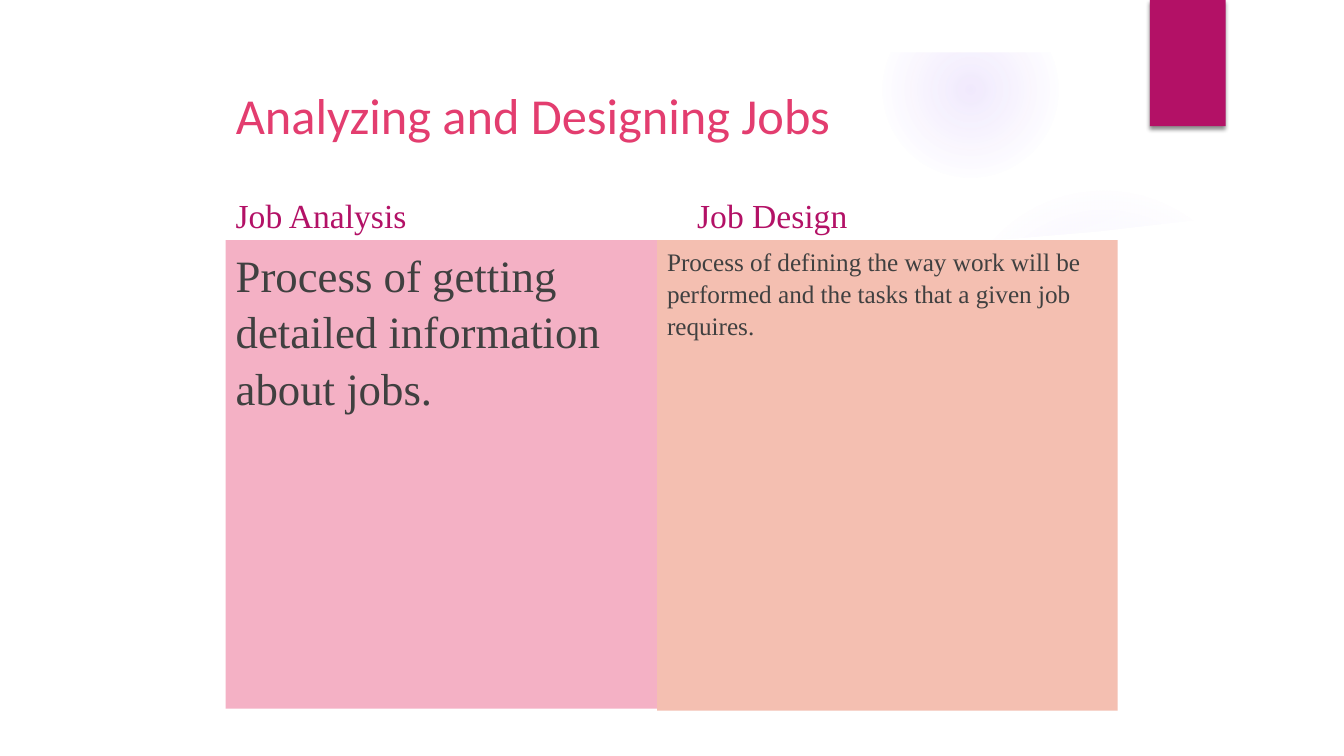
from pptx import Presentation, util as u
from pptx.dml.color import RGBColor
from pptx.enum import shapes, text
from pptx.oxml import parse_xml
from pptx.oxml.ns import nsdecls, qn

PINK = RGBColor(0xE3, 0x3D, 0x6F)
PLUM = RGBColor(0xB3, 0x11, 0x66)
ROSE = RGBColor(0xF4, 0xB1, 0xC5)
PEACH = RGBColor(0xF4, 0xBF, 0xB1)
GREY = RGBColor(0x40, 0x40, 0x40)
WHITE = RGBColor(0xFF, 0xFF, 0xFF)
LILAC = RGBColor(0x9B, 0x6B, 0xF2)

HEAD = {"size": u.Pt(24), "name": "Times New Roman"}
GLOWS = [
    ((23.9, 4.65, 7.82, 7.82), [(0, 7), (36, 6), (69, 0)]),
    ((22.23, 0.03, 4.45, 4.45), [(0, 14), (36, 7), (73, 0)]),
]
BAND = [(23.72, 6.35), (27, 6.2), (32.74, 5.44), (32.59, 4.22),
        (30.25, 4.9), (27.89, 5.49), (25.37, 5.94), (23.62, 6.17)]
PANEL = [(1.27, 5.18), (1.27, 17.78), (32.61, 17.78), (32.61, 5.18),
         (30.48, 5.51), (27.64, 5.84), (25.5, 6.02), (22.71, 6.2),
         (18.64, 6.3), (14.2, 6.25), (9.14, 5.99), (4.04, 5.54)]
COLUMNS = [
    ("Job Analysis", 5.69, (5.69, 6.05, 10.92, 11.81), ROSE, 32,
     "Process of getting detailed information about jobs."),
    ("Job Design", 17.32, (16.56, 6.05, 11.61, 11.86), PEACH, 18,
     "Process of defining the way work will be performed "
     "and the tasks that a given job requires."),
]


def cms(vals):
    return [u.Cm(v) for v in vals]


def paint(shape, fill):
    shape.shadow.inherit = False
    shape.line.fill.background()
    shape.fill.solid()
    shape.fill.fore_color.rgb = fill
    return shape


def block(slide, box, fill, kind=shapes.MSO_SHAPE.RECTANGLE):
    return paint(slide.shapes.add_shape(kind, *cms(box)), fill)


def glow(slide, box, stops):
    shape = block(slide, box, LILAC, shapes.MSO_SHAPE.OVAL)
    marks = "".join(
        f'<a:gs pos="{pos * 1000}"><a:srgbClr val="{LILAC}">'
        f'<a:alpha val="{alpha * 1000}"/></a:srgbClr></a:gs>'
        for pos, alpha in stops)
    grad = parse_xml(
        f'<a:gradFill {nsdecls("a")}><a:gsLst>{marks}</a:gsLst>'
        '<a:path path="circle"><a:fillToRect l="50000" t="50000" '
        'r="50000" b="50000"/></a:path></a:gradFill>')
    props = shape.element.spPr
    props.replace(props.find(qn("a:solidFill")), grad)


def outline(slide, points):
    first, *rest = [cms(p) for p in points]
    form = slide.shapes.build_freeform(*first)
    form.add_line_segments(rest, close=True)
    return paint(form.convert_to_shape(), WHITE)


def band(slide):
    shape = outline(slide, BAND)
    shape.rotation = 350.2
    tint = shape.element.spPr.find(qn("a:solidFill"))[0]
    tint.append(parse_xml(f'<a:alpha {nsdecls("a")} val="20000"/>'))


def ribbon(slide):
    shape = block(slide, (28.98, 0, 1.91, 3.18), PLUM)
    shape.element.spPr.find(qn("a:effectLst")).append(parse_xml(
        f'<a:outerShdw {nsdecls("a")} blurRad="38100" dist="25400" '
        'dir="5400000" rotWithShape="0"><a:srgbClr val="000000">'
        '<a:alpha val="45000"/></a:srgbClr></a:outerShdw>'))


def write(shape, words, color, form, anchor=text.MSO_ANCHOR.TOP, gap=1.0):
    frame = shape.text_frame
    frame.text = words
    frame.word_wrap = True
    frame.auto_size = text.MSO_AUTO_SIZE.NONE
    frame.vertical_anchor = anchor
    para = frame.paragraphs[0]
    para.alignment = text.PP_ALIGN.LEFT
    para.line_spacing = gap
    font = para.runs[0].font
    for key, val in form.items():
        setattr(font, key, val)
    font.color.rgb = color


def title(slide, words):
    shape = slide.shapes.title
    names = ("left", "top", "width", "height")
    for key, val in zip(names, cms((5.69, 1.98, 22.86, 3.18))):
        setattr(shape, key, val)
    write(shape, words, PINK, {"size": u.Pt(36), "name": "Calibri"})


def column(slide, head, left, box, fill, size, body):
    label = slide.shapes.add_textbox(*cms((left, 4.27, 11.23, 1.78)))
    write(label, head, PLUM, HEAD, text.MSO_ANCHOR.BOTTOM)
    write(block(slide, box, fill), body, GREY,
          {**HEAD, "size": u.Pt(size)}, gap=1.05)


def main():
    deck = Presentation()
    deck.slide_width, deck.slide_height = cms((33.87, 19.05))
    slide = deck.slides.add_slide(deck.slide_layouts.get_by_name("Title Only"))
    for box, stops in GLOWS:
        glow(slide, box, stops)
    band(slide)
    outline(slide, PANEL)
    block(slide, (0, 0, 33.87, 1.32), WHITE)
    ribbon(slide)
    title(slide, "Analyzing and Designing Jobs")
    for col in COLUMNS:
        column(slide, *col)
    deck.save("out.pptx")


if __name__ == "__main__":
    main()
